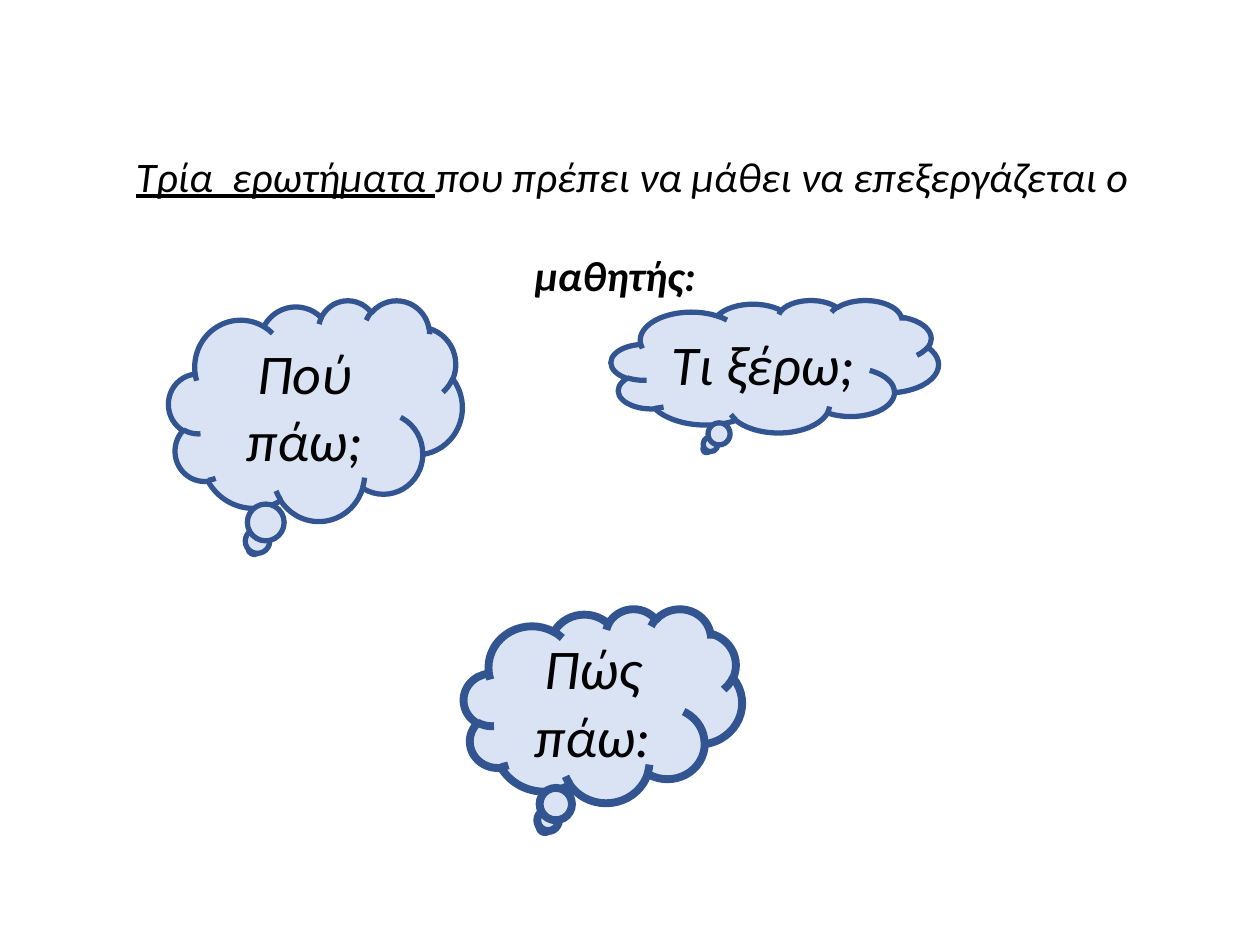
import pptx
import pptx.util
import pptx.dml.color
import pptx.enum.shapes
import pptx.enum.text

Cm, Pt = pptx.util.Cm, pptx.util.Pt
INK = pptx.dml.color.RGBColor(0x00, 0x00, 0x00)
CLOUD_FILL = pptx.dml.color.RGBColor(0xDA, 0xE3, 0xF3)
CLOUD_LINE = pptx.dml.color.RGBColor(0x32, 0x54, 0x91)


def add_text(paragraph, text, size=24, bold=False, underline=False):
    run = paragraph.add_run()
    run.text = text
    font = run.font
    font.name, font.size, font.color.rgb = "Calibri", Pt(size), INK
    font.italic, font.bold, font.underline = True, bold, underline


def add_heading(slide, left, top, width, height):
    heading = slide.shapes.add_textbox(Cm(left), Cm(top), Cm(width), Cm(height))
    frame = heading.text_frame
    frame.word_wrap = True
    opening = frame.paragraphs[0]
    add_text(opening, "Τρία  ερωτήματα ", underline=True)
    add_text(opening, "που πρέπει να μάθει να επεξεργάζεται ο")
    closing = frame.add_paragraph()
    closing.space_before = Pt(28)
    # The closing word starts well inside the line above it.
    closing._p.get_or_add_pPr().set("marL", str(Cm(8.04)))
    add_text(closing, "μαθητής:", bold=True)


def add_thought(slide, question, left, top, width, height, outline=3):
    cloud = slide.shapes.add_shape(
        pptx.enum.shapes.MSO_SHAPE.CLOUD_CALLOUT,
        Cm(left), Cm(top), Cm(width), Cm(height))
    cloud.shadow.inherit = False
    cloud.fill.solid()
    cloud.fill.fore_color.rgb = CLOUD_FILL
    cloud.line.color.rgb = CLOUD_LINE
    cloud.line.width = Pt(outline)
    frame = cloud.text_frame
    frame.word_wrap = True
    frame.vertical_anchor = pptx.enum.text.MSO_ANCHOR.MIDDLE
    paragraph = frame.paragraphs[0]
    paragraph.alignment = pptx.enum.text.PP_ALIGN.CENTER
    add_text(paragraph, question, size=32)


def main():
    deck = pptx.Presentation()
    deck.slide_width, deck.slide_height = Cm(25.4), Cm(19.05)
    slide = deck.slides.add_slide(deck.slide_layouts[6])
    add_heading(slide, 2.49, 2.9, 20.57, 14.63)
    add_thought(slide, "Τι ξέρω;", 12.32, 6.05, 6.6, 2.67)
    add_thought(slide, "Πώς πάω:", 9.35, 12.27, 5.61, 3.91, outline=4.5)
    add_thought(slide, "Πού πάω;", 3.4, 6.05, 5.92, 4.45)
    deck.save("out.pptx")


if __name__ == "__main__":
    main()
